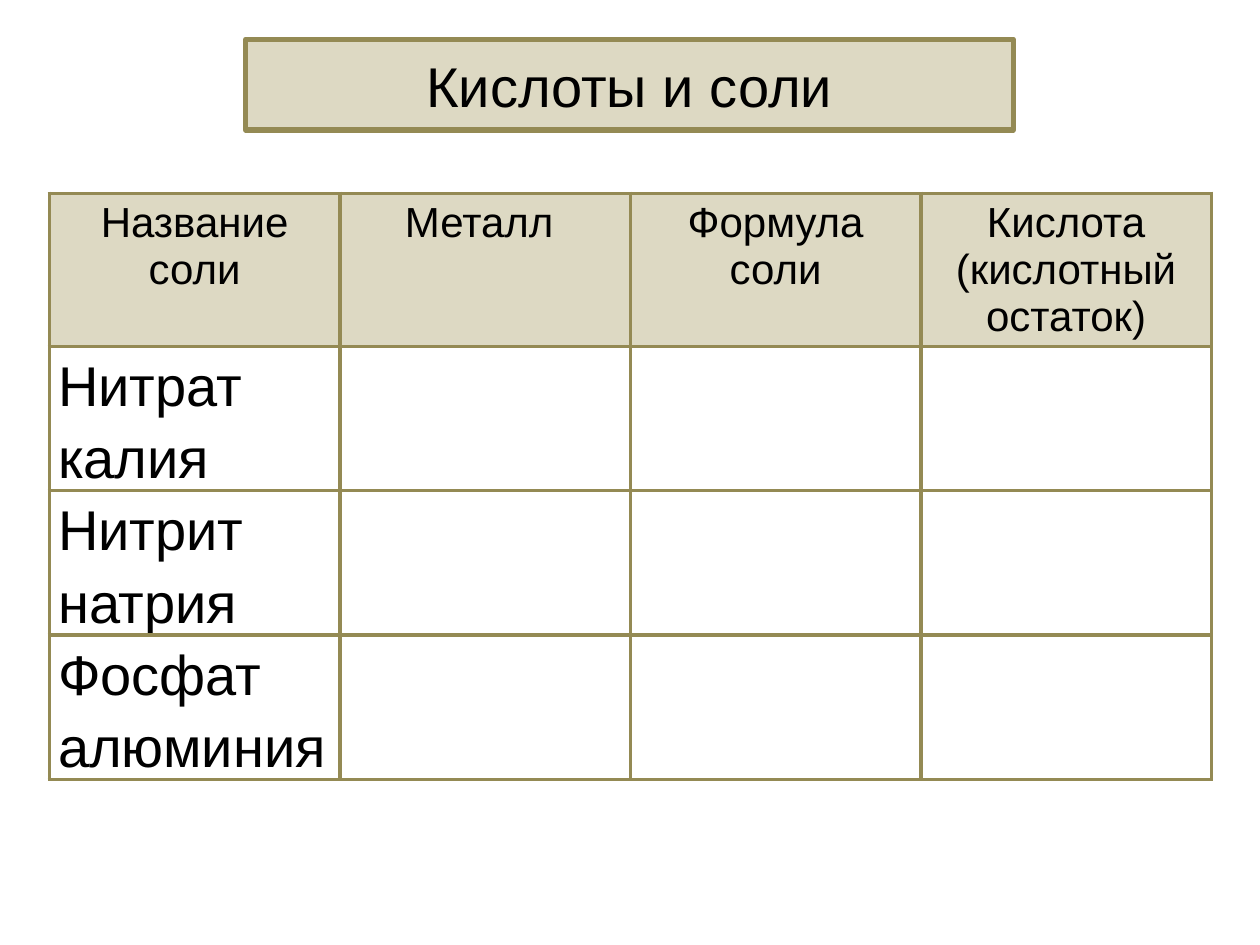
from lxml import etree
from pptx import Presentation
from pptx import util as u
from pptx.dml import color
from pptx.enum import text
from pptx.oxml import ns

SAND = "DDD9C3"
OLIVE = "948A54"
BLACK = "000000"


def paint(fill, value):
    fill.solid()
    fill.fore_color.rgb = color.RGBColor.from_string(value)


def write(frame, words, size=32, align=text.PP_ALIGN.LEFT, spacing=1.0):
    para = frame.paragraphs[0]
    para.alignment = align
    para.line_spacing = spacing
    span = para.add_run()
    span.text = words
    span.font.name = "Arial"
    span.font.size = u.Pt(size)
    span.font.bold = False
    paint(span.font.fill, BLACK)


deck = Presentation()
deck.slide_width = u.Pt(720)
deck.slide_height = u.Pt(540)
page = deck.slides.add_slide(deck.slide_layouts[5])

title = page.shapes.title
title.left, title.top = u.Pt(140.4), u.Pt(22.5)
title.width, title.height = u.Pt(438.6), u.Pt(51.8)
paint(title.fill, SAND)
paint(title.line.fill, OLIVE)
title.line.width = u.Pt(3)
title.text_frame.vertical_anchor = text.MSO_ANCHOR.MIDDLE
write(title.text_frame, "Кислоты и соли", align=text.PP_ALIGN.CENTER)

headings = ["Название соли", "Металл ", "Формула соли", "Кислота (кислотный остаток)"]
salts = ["Нитрат калия", "Нитрит натрия", "Фосфат алюминия"]
column_width, header_height, salt_height = 166, 87.4, 82.4

frame = page.shapes.add_table(
    len(salts) + 1, len(headings), u.Pt(28.2), u.Pt(110.4),
    u.Pt(column_width * len(headings)),
    u.Pt(header_height + salt_height * len(salts)))
table = frame.table
table.first_row = False
table.horz_banding = False
for column in table.columns:
    column.width = u.Pt(column_width)
for index, row in enumerate(table.rows):
    row.height = u.Pt(salt_height if index else header_height)

for cell in table.iter_cells():
    properties = cell._tc.get_or_add_tcPr()
    for side in ("lnL", "lnR", "lnT", "lnB"):
        border = etree.SubElement(properties, ns.qn(f"a:{side}"), w=str(u.Pt(2.25)))
        solid = etree.SubElement(border, ns.qn("a:solidFill"))
        etree.SubElement(solid, ns.qn("a:srgbClr"), val=OLIVE)
    cell.fill.background()

for index, heading in enumerate(headings):
    cell = table.cell(0, index)
    paint(cell.fill, SAND)
    write(cell.text_frame, heading, size=24, align=text.PP_ALIGN.CENTER)

for index, salt in enumerate(salts, start=1):
    cell = table.cell(index, 0)
    cell.margin_left = cell.margin_right = u.Pt(5)
    cell.margin_top = cell.margin_bottom = u.Pt(0)
    write(cell.text_frame, salt, spacing=1.15)

deck.save("out.pptx")
